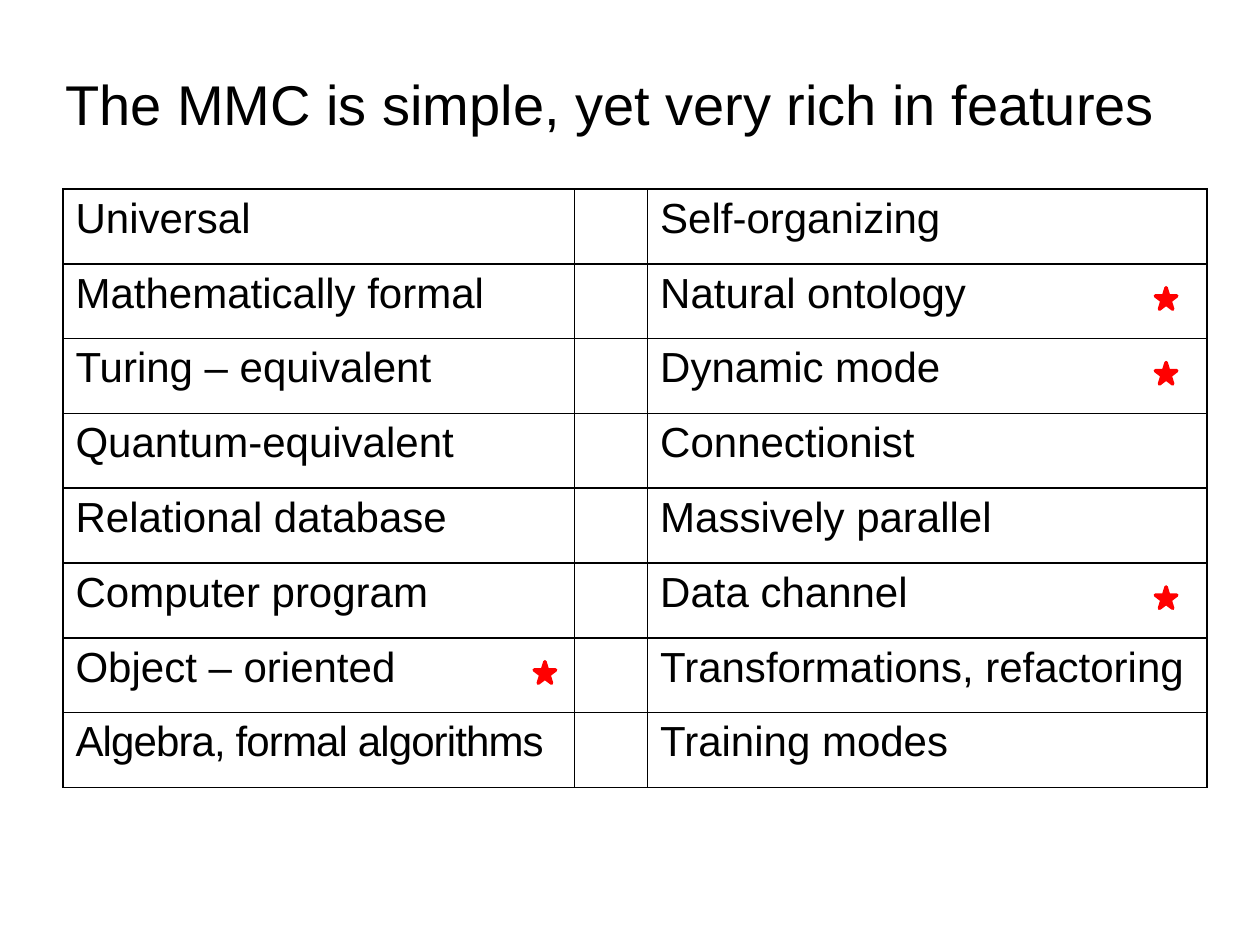
from dataclasses import dataclass

from pptx import Presentation
from pptx.dml.color import RGBColor
from pptx.enum.shapes import MSO_SHAPE as Shape
from pptx.oxml import parse_xml
from pptx.oxml.ns import nsdecls
from pptx.util import Inches, Pt


@dataclass(frozen=True)
class Theme:
    """Colours, font and sizes of the slide."""
    font: str = "Arial"
    ink: str = "000000"
    paper: str = "FFFFFF"
    star: str = "FF0000"
    title_size: int = 32
    cell_size: int = 24
    border: int = 1
    star_line: int = 2


THEME = Theme()
FEATURES = [
    ("Universal", "Self-organizing"),
    ("Mathematically formal", "Natural ontology"),
    ("Turing – equivalent", "Dynamic mode"),
    ("Quantum-equivalent", "Connectionist"),
    ("Relational database", "Massively parallel"),
    ("Computer program", "Data channel"),
    ("Object – oriented", "Transformations, refactoring"),
    ("Algebra, formal algorithms", "Training modes"),
]
TIGHT = {"Algebra, formal algorithms": -0.5}
STARRED = {"Natural ontology", "Dynamic mode", "Data channel", "Object – oriented"}
COLUMNS = (4.06, 0.58, 4.44)
FEATURE_COLUMNS = (0, 2)
STAR_INSETS = (0.32, 0.41)
STAR_DROP = 0.19
STAR_SIZE = 0.17


def write(frame, text, *, size, color=THEME.ink, spacing=0):
    """Put one formatted run of text into a text frame."""
    run = frame.paragraphs[0].add_run()
    run.text = text
    run.font.name = THEME.font
    run.font.size = Pt(size)
    run.font.color.rgb = RGBColor.from_string(color)
    if spacing:
        run.font._element.set("spc", str(int(spacing * 100)))


def outline(cell):
    """Clear the fill of a cell and draw its four borders."""
    cell.fill.background()
    properties = cell._tc.get_or_add_tcPr()
    for place, side in enumerate("LRTB"):
        properties.insert(place, parse_xml(
            f'<a:ln{side} {nsdecls("a")} w="{Pt(THEME.border)}"><a:solidFill>'
            f'<a:srgbClr val="{THEME.ink}"/></a:solidFill></a:ln{side}>'))


def add_title(slide, left, top, width, height):
    """Place the slide title in the given box."""
    title = slide.shapes.add_textbox(
        Inches(left), Inches(top), Inches(width), Inches(height))
    title.text_frame.word_wrap = True
    write(title.text_frame, "The MMC is simple, yet very rich in features",
          size=THEME.title_size)


def add_star(slide, left, top):
    """Place one red marker star."""
    star = slide.shapes.add_shape(
        Shape.STAR_5_POINT, Inches(left), Inches(top),
        Inches(STAR_SIZE), Inches(STAR_SIZE))
    star.shadow.inherit = False
    red = RGBColor.from_string(THEME.star)
    star.fill.solid()
    star.fill.fore_color.rgb = red
    star.line.color.rgb = red
    star.line.width = Pt(THEME.star_line)


def add_features(slide, left, top, width, height):
    """Place the feature table and its stars in the given box."""
    table = slide.shapes.add_table(
        len(FEATURES), len(COLUMNS), Inches(left), Inches(top),
        Inches(width), Inches(height)).table
    table.first_row = table.horz_banding = False
    for column, column_width in zip(table.columns, COLUMNS):
        column.width = Inches(column_width)
    row_height = height / len(FEATURES)
    for row in table.rows:
        row.height = Inches(row_height)
    for cell in table.iter_cells():
        outline(cell)
    for row, pair in enumerate(FEATURES):
        for feature, column, inset in zip(pair, FEATURE_COLUMNS, STAR_INSETS):
            write(table.cell(row, column).text_frame, feature,
                  size=THEME.cell_size, spacing=TIGHT.get(feature, 0))
            if feature in STARRED:
                right = left + sum(COLUMNS[:column + 1])
                add_star(slide, right - inset, top + row * row_height + STAR_DROP)


def main():
    """Build and save the slide."""
    deck = Presentation()
    deck.slide_width, deck.slide_height = Inches(10), Inches(7.5)
    slide = deck.slides.add_slide(deck.slide_layouts[6])
    slide.background.fill.solid()
    slide.background.fill.fore_color.rgb = RGBColor.from_string(THEME.paper)
    add_title(slide, 0.42, 0.5, 9.5, 0.64)
    add_features(slide, 0.5, 1.5, sum(COLUMNS), 4.75)
    deck.save("out.pptx")


if __name__ == "__main__":
    main()
